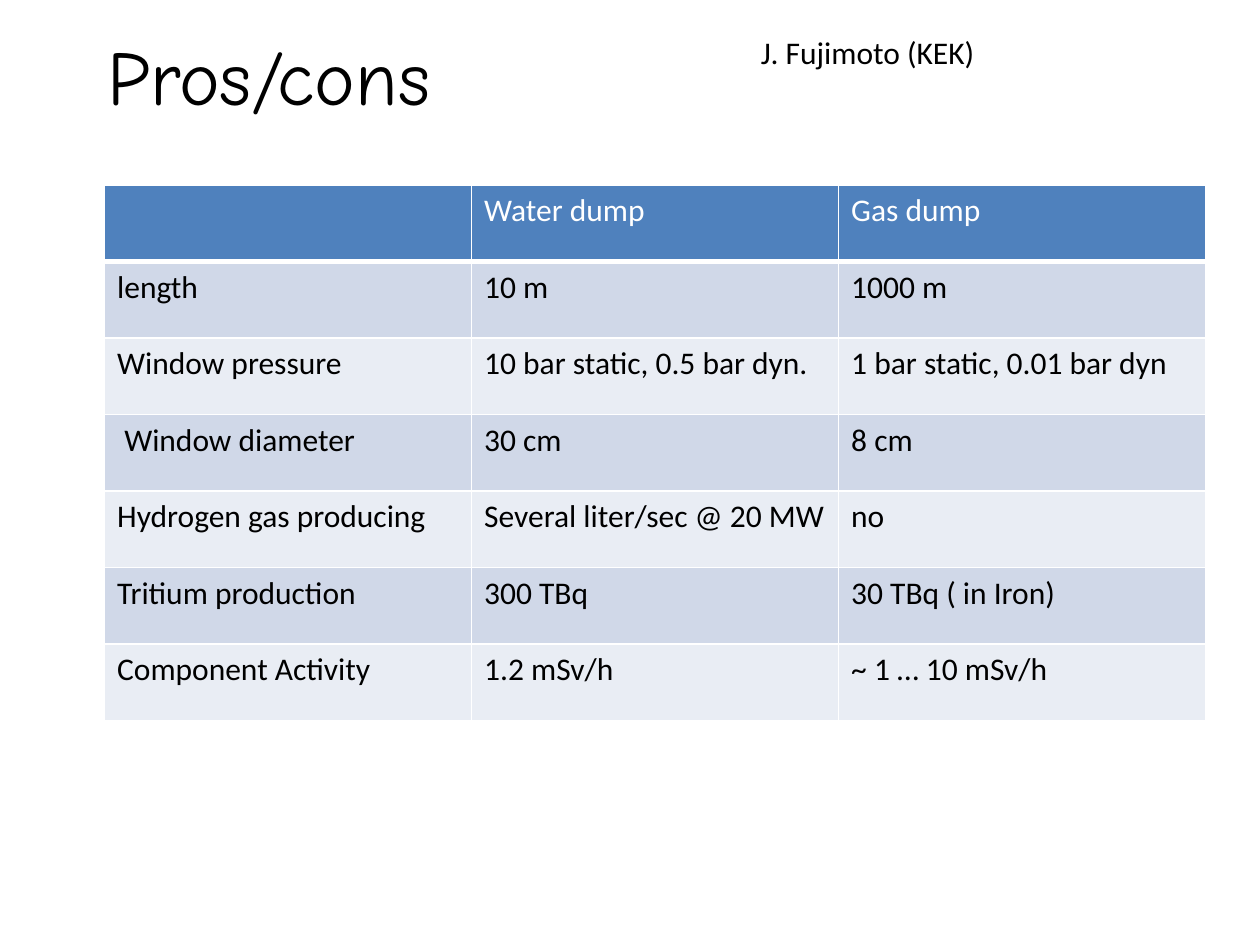
from pptx import Presentation
from pptx.dml.color import RGBColor
from pptx.enum import text
from pptx.oxml import parse_xml
from pptx.oxml.ns import nsdecls
from pptx.util import Inches, Pt


def color(value):
    return RGBColor.from_string(value)


def style(para, name, size, value):
    para.font.name = name
    para.font.size = Pt(size)
    para.font.bold = False
    para.font.color.rgb = color(value)


deck = Presentation()
deck.slide_width, deck.slide_height = Inches(10), Inches(7.5)
page = deck.slides.add_slide(deck.slide_layouts[5])

# Title
title = page.shapes.title
title.left, title.top = Inches(0.75), Inches(-0.03)
title.width, title.height = Inches(9), Inches(1.25)
title.text_frame.text = "Pros/cons"
title.text_frame.vertical_anchor = text.MSO_ANCHOR.MIDDLE
title_para = title.text_frame.paragraphs[0]
title_para.alignment = text.PP_ALIGN.LEFT
style(title_para, "Comic Neue", 44, "000000")

# Comparison table
ROWS = [
    ("", "Water dump", "Gas dump"),
    ("length", "10 m", "1000 m"),
    ("Window pressure", "10 bar static, 0.5 bar dyn.", "1 bar static, 0.01 bar dyn"),
    (" Window diameter", "30 cm", "8 cm"),
    ("Hydrogen gas producing", "Several liter/sec @ 20 MW", "no"),
    ("Tritium production", "300 TBq", "30 TBq ( in Iron)"),
    ("Component Activity", "1.2 mSv/h", "~ 1 … 10 mSv/h"),
]
table = page.shapes.add_table(
    len(ROWS), 3, Inches(0.83), Inches(1.47), Inches(8.74), Inches(4.25)
).table

for row, values in enumerate(ROWS):
    is_header = row == 0
    fill = "4F81BD" if is_header else ("E9EDF4", "D0D8E8")[row % 2]
    for column, value in enumerate(values):
        cell = table.cell(row, column)
        cell.text = value
        style(cell.text_frame.paragraphs[0], "Calibri", 18,
              "FFFFFF" if is_header else "000000")
        # White cell borders, heavier below the header
        properties = cell._tc.get_or_add_tcPr()
        for side in "LRTB":
            width = Pt(3 if is_header and side == "B" else 1)
            properties.append(parse_xml(
                f'<a:ln{side} {nsdecls("a")} w="{width}"><a:solidFill>'
                f'<a:srgbClr val="FFFFFF"/></a:solidFill></a:ln{side}>'))
        cell.fill.solid()
        cell.fill.fore_color.rgb = color(fill)

# Author
author = page.shapes.add_textbox(Inches(5.94), Inches(0.21), Inches(1.92), Inches(0.4))
author.text_frame.word_wrap = False
author.text_frame.auto_size = text.MSO_AUTO_SIZE.SHAPE_TO_FIT_TEXT
author.text_frame.text = "J. Fujimoto (KEK)"
style(author.text_frame.paragraphs[0], "Calibri", 18, "000000")

deck.save("out.pptx")
